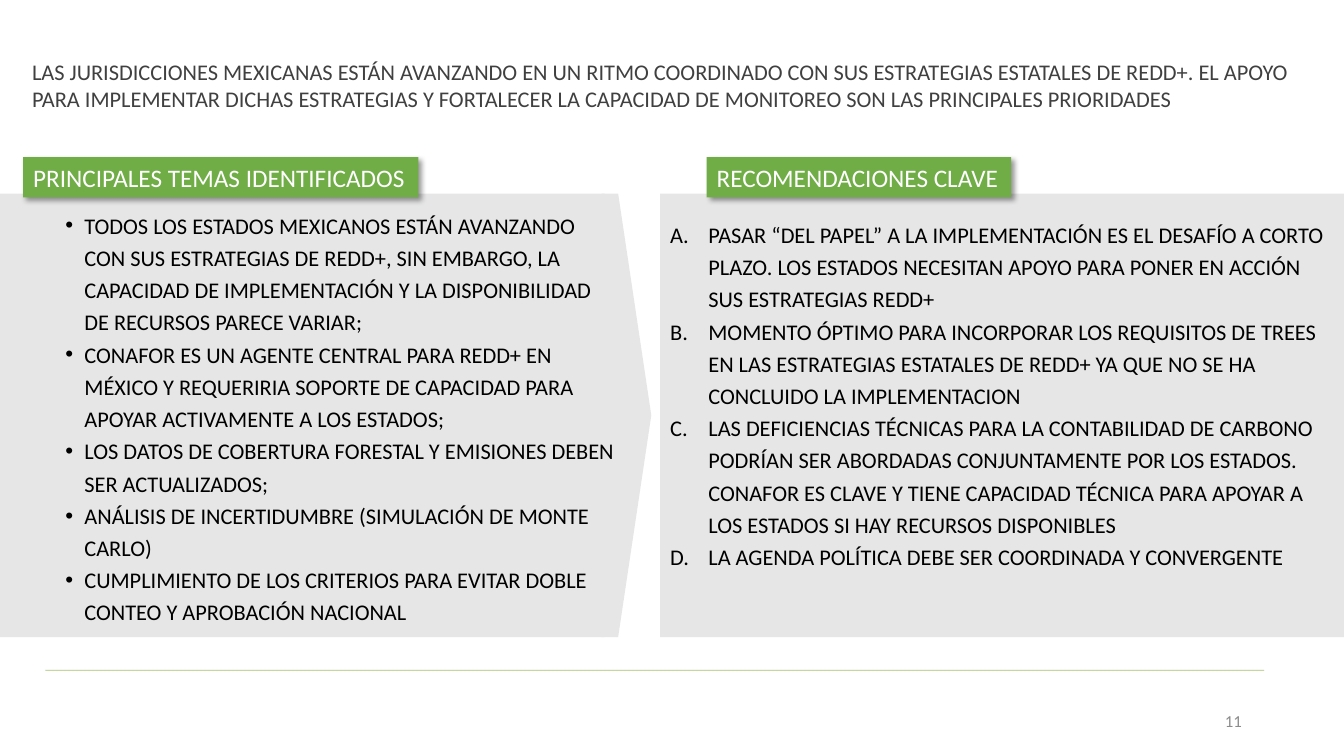
from lxml.etree import SubElement
from pptx import Presentation
from pptx.dml.color import RGBColor
from pptx.enum.shapes import MSO_CONNECTOR, MSO_SHAPE
from pptx.enum.text import MSO_ANCHOR, PP_ALIGN
from pptx.oxml.ns import qn
from pptx.util import Inches, Pt

WIDE, HIGH = Inches(13.33), Inches(7.5)
INK = {"panel": "E7E6E6", "tag": "70AD47", "rule": "69990A", "title": "404040",
       "body": "000000", "light": "FFFFFF", "page": "8C8C8C"}

# Rows and columns, in percent of the slide
TOP, DEPTH = 25.6, 58.67
RIGHT = 49.12

TITLE = ("LAS JURISDICCIONES MEXICANAS ESTÁN AVANZANDO EN UN RITMO COORDINADO CON SUS "
         "ESTRATEGIAS ESTATALES DE REDD+. EL APOYO PARA IMPLEMENTAR DICHAS ESTRATEGIAS Y "
         "FORTALECER LA CAPACIDAD DE MONITOREO SON LAS PRINCIPALES PRIORIDADES")
THEMES = [
    "TODOS LOS ESTADOS MEXICANOS ESTÁN AVANZANDO CON SUS ESTRATEGIAS DE REDD+, SIN EMBARGO, "
    "LA CAPACIDAD DE IMPLEMENTACIÓN Y LA DISPONIBILIDAD DE RECURSOS PARECE VARIAR;",
    "CONAFOR ES UN AGENTE CENTRAL PARA REDD+ EN MÉXICO Y REQUERIRIA SOPORTE DE CAPACIDAD "
    "PARA APOYAR ACTIVAMENTE A LOS ESTADOS;",
    "LOS DATOS DE COBERTURA FORESTAL Y EMISIONES DEBEN SER ACTUALIZADOS;",
    "ANÁLISIS DE INCERTIDUMBRE (SIMULACIÓN DE MONTE CARLO)",
    "CUMPLIMIENTO DE LOS CRITERIOS PARA EVITAR DOBLE CONTEO Y APROBACIÓN NACIONAL",
]
ADVICE = [
    "PASAR “DEL PAPEL” A LA IMPLEMENTACIÓN ES EL DESAFÍO A CORTO PLAZO. LOS ESTADOS "
    "NECESITAN APOYO PARA PONER EN ACCIÓN SUS ESTRATEGIAS REDD+",
    "MOMENTO ÓPTIMO PARA INCORPORAR LOS REQUISITOS DE TREES EN LAS ESTRATEGIAS ESTATALES "
    "DE REDD+ YA QUE NO SE HA CONCLUIDO LA IMPLEMENTACION",
    "LAS DEFICIENCIAS TÉCNICAS PARA LA CONTABILIDAD DE CARBONO PODRÍAN SER ABORDADAS "
    "CONJUNTAMENTE POR LOS ESTADOS. CONAFOR ES CLAVE Y TIENE CAPACIDAD TÉCNICA PARA APOYAR "
    "A LOS ESTADOS SI HAY RECURSOS DISPONIBLES",
    "LA AGENDA POLÍTICA DEBE SER COORDINADA Y CONVERGENTE",
]


def place(*box):
    """Turn percent shares (x, y, x, y) into lengths."""
    return [int(share * side / 100) for share, side in zip(box, (WIDE, HIGH) * 2)]


def assign(item, **values):
    for name, value in values.items():
        setattr(item, name, value)


def paint(target, ink):
    target.solid()
    target.fore_color.rgb = RGBColor.from_string(INK[ink])


def write(shape, lines, size, ink, align=PP_ALIGN.LEFT, anchor=MSO_ANCHOR.TOP, wrap=True):
    frame = shape.text_frame
    assign(frame, word_wrap=wrap, vertical_anchor=anchor)
    frame.text = "\n".join(lines)
    for para in frame.paragraphs:
        para.alignment = align
        font = para.runs[0].font
        assign(font, name="Calibri", size=Pt(size))
        font.color.rgb = RGBColor.from_string(INK[ink])
    return frame


def label(slide, box, lines, size, ink, **form):
    return write(slide.shapes.add_textbox(*place(*box)), lines, size, ink, **form)


def block(slide, kind, box, ink):
    shape = slide.shapes.add_shape(kind, *place(*box))
    shape.shadow.inherit = False
    paint(shape.fill, ink)
    shape.line.fill.background()
    return shape


def tag(slide, x, width, text):
    shape = block(slide, MSO_SHAPE.RECTANGLE, (x, 20.8, width, 5.33), "tag")
    effects = shape._element.spPr.find(qn("a:effectLst"))
    shade = SubElement(effects, qn("a:outerShdw"), blurRad=str(Pt(4)), dist=str(Pt(3)),
                       dir="2700000", algn="tl", rotWithShape="0")
    tint = SubElement(shade, qn("a:srgbClr"), val="000000")
    SubElement(tint, qn("a:alpha"), val="40000")
    write(shape, [text], 18, "light", wrap=False)


def listing(slide, box, lines, indent, mark, **values):
    frame = label(slide, box, lines, 16, "body")
    for para in frame.paragraphs:
        para.line_spacing = 1.2
        props = para._p.get_or_add_pPr()
        props.set("marL", str(Inches(indent)))
        props.set("indent", str(-Inches(indent)))
        SubElement(props, qn("a:buFont"), typeface="Arial" if mark == "a:buChar" else "Calibri")
        SubElement(props, qn(mark), **values)


def rule(slide, start, end, ink):
    line = slide.shapes.add_connector(MSO_CONNECTOR.STRAIGHT, *place(*start, *end))
    line.line.width = Pt(0.5)
    paint(line.line.fill, ink)
    props = line._element.spPr
    tint = next(props.iter(qn("a:srgbClr")))
    SubElement(tint, qn("a:alpha"), val="60000")
    SubElement(props, qn("a:effectLst"))


def main():
    deck = Presentation()
    assign(deck, slide_width=WIDE, slide_height=HIGH)
    slide = deck.slides.add_slide(deck.slide_layouts[6])

    # Grey panels, the left one ending in a point
    point = block(slide, MSO_SHAPE.PENTAGON, (44.78, TOP, 3.68, DEPTH), "panel")
    point.adjustments[0] = 0.67
    for x, width in ((0, 45), (RIGHT, 100 - RIGHT)):
        block(slide, MSO_SHAPE.RECTANGLE, (x, TOP, width, DEPTH), "panel")

    # Footer
    label(slide, (70.65, 92.67, 22.5, 5.33), ["11"], 12, "page",
          align=PP_ALIGN.RIGHT, anchor=MSO_ANCHOR.MIDDLE)
    rule(slide, (3.38, 88.67), (94.05, 88.67), "rule")

    # Lists
    listing(slide, (4.12, 26.67, 42.75, 57.07), THEMES, 0.19, "a:buChar", char="•")
    listing(slide, (RIGHT, 27.87, 100 - RIGHT, 48.4), ADVICE, 0.38,
            "a:buAutoNum", type="alphaUcPeriod")

    # Headings
    tag(slide, 1.73, 29.4, "PRINCIPALES TEMAS IDENTIFICADOS")
    tag(slide, 52.58, 22.65, "RECOMENDACIONES CLAVE")
    label(slide, (1.65, 7.07, 96.45, 8.53), [TITLE], 16, "title")

    deck.save("out.pptx")


if __name__ == "__main__":
    main()
